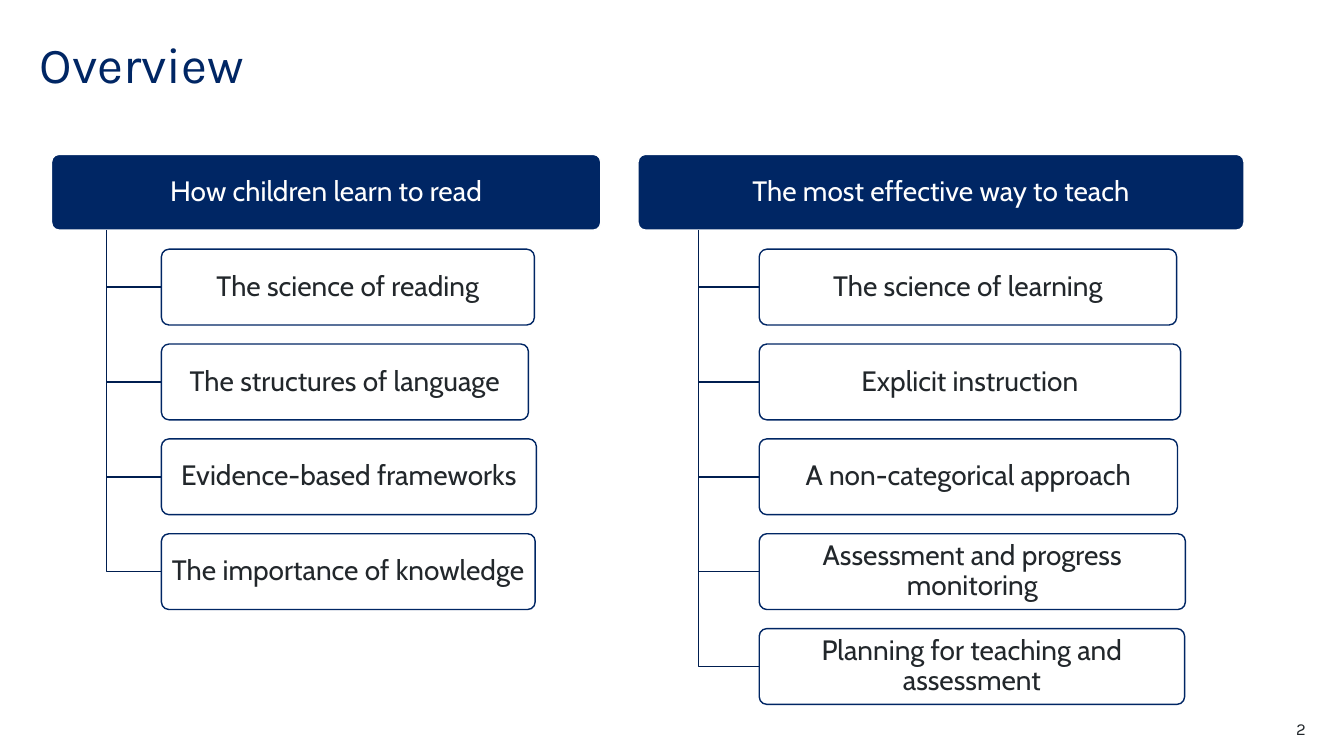
from lxml import etree
from pptx import Presentation
from pptx.dml.color import RGBColor
from pptx.enum import shapes, text
from pptx.oxml.ns import qn
from pptx.util import Cm, Pt

TITLE = "Overview"
PAGE = "2"
# Each branch: heading, left, heading width, [(topic, topic width)], lengths in cm
BRANCHES = [
    ("How children learn to read", 1.3, 13.84, [
        ("The science of reading", 9.4),
        ("The structures of language", 9.25),
        ("Evidence-based frameworks", 9.45),
        ("The importance of knowledge", 9.42),
    ]),
    ("The most effective way to teach", 16.08, 15.27, [
        ("The science of learning", 10.52),
        ("Explicit instruction", 10.62),
        ("A non-categorical approach", 10.54),
        ("Assessment and progress monitoring", 10.74),
        ("Planning for teaching and assessment", 10.72),
    ]),
]

NAVY = RGBColor(0x00, 0x26, 0x64)
BRANCH_LINE = RGBColor(0x00, 0x1E, 0x50)
INK = RGBColor(0x22, 0x27, 0x2B)
WHITE = RGBColor(0xFF, 0xFF, 0xFF)

TOP, ROW_HEIGHT, ROW_PITCH = 3.89, 1.91, 2.39


def write(frame, wording, font, size, color, align, inset=(0, 0)):
    """Fill a text frame with one formatted paragraph; inset is (sides, top and bottom)."""
    frame.text = wording
    frame.word_wrap = True
    frame.auto_size = text.MSO_AUTO_SIZE.NONE
    frame.margin_left = frame.margin_right = Cm(inset[0])
    frame.margin_top = frame.margin_bottom = Cm(inset[1])
    paragraph = frame.paragraphs[0]
    paragraph.alignment = align
    paragraph.line_spacing = 0.9
    run_font = paragraph.runs[0].font
    run_font.name, run_font.size, run_font.color.rgb = font, Pt(size), color


def add_box(slide, wording, left, top, width, fill, line, ink):
    box = slide.shapes.add_shape(shapes.MSO_SHAPE.ROUNDED_RECTANGLE,
                                 Cm(left), Cm(top), Cm(width), Cm(ROW_HEIGHT))
    box.adjustments[0] = 0.1
    box.shadow.inherit = False
    box.fill.solid()
    box.fill.fore_color.rgb = fill
    box.line.color.rgb = line
    box.line.width = Pt(1)
    write(box.text_frame, wording, "Cabin", 20, ink, text.PP_ALIGN.CENTER, (0.16, 0.13))
    box.text_frame.vertical_anchor = text.MSO_ANCHOR.MIDDLE
    return box


def add_elbow(slide, trunk, start, end, middle):
    """Draw a line down the trunk, then right to a topic box."""
    builder = slide.shapes.build_freeform(Cm(trunk), Cm(start))
    builder.add_line_segments([(Cm(trunk), Cm(middle)), (Cm(end), Cm(middle))], close=False)
    elbow = builder.convert_to_shape()
    elbow.shadow.inherit = False
    elbow.fill.background()
    elbow.line.color.rgb = BRANCH_LINE
    elbow.line.width = Pt(1)


def add_branch(slide, heading, left, width, topics):
    add_box(slide, heading, left, TOP, width, NAVY, WHITE, WHITE)
    trunk, topic_left = left + width / 10, left + width / 5
    for row, (topic, topic_width) in enumerate(topics, start=1):
        top = TOP + row * ROW_PITCH
        add_elbow(slide, trunk, TOP + ROW_HEIGHT, topic_left, top + ROW_HEIGHT / 2)
        box = add_box(slide, topic, topic_left, top, topic_width, WHITE, NAVY, INK)
        fill_color = box.fill._xPr.find(qn("a:solidFill"))[0]
        etree.SubElement(fill_color, qn("a:alpha"), val="90000")


def main():
    deck = Presentation()
    deck.slide_width, deck.slide_height = Cm(33.87), Cm(19.05)
    slide = deck.slides.add_slide(deck.slide_layouts[5])

    title = slide.shapes.title
    title.left, title.top, title.width, title.height = Cm(1), Cm(1), Cm(28), Cm(2.8)
    write(title.text_frame, TITLE, "Karla", 36, NAVY, text.PP_ALIGN.LEFT)
    title.text_frame.vertical_anchor = text.MSO_ANCHOR.TOP

    for branch in BRANCHES:
        add_branch(slide, *branch)

    page = slide.shapes.add_textbox(Cm(30.91), Cm(18.11), Cm(2), Cm(0.5))
    write(page.text_frame, PAGE, "Karla", 12, INK, text.PP_ALIGN.RIGHT)
    page.text_frame.paragraphs[0].line_spacing = 1.0

    deck.save("out.pptx")


if __name__ == "__main__":
    main()
